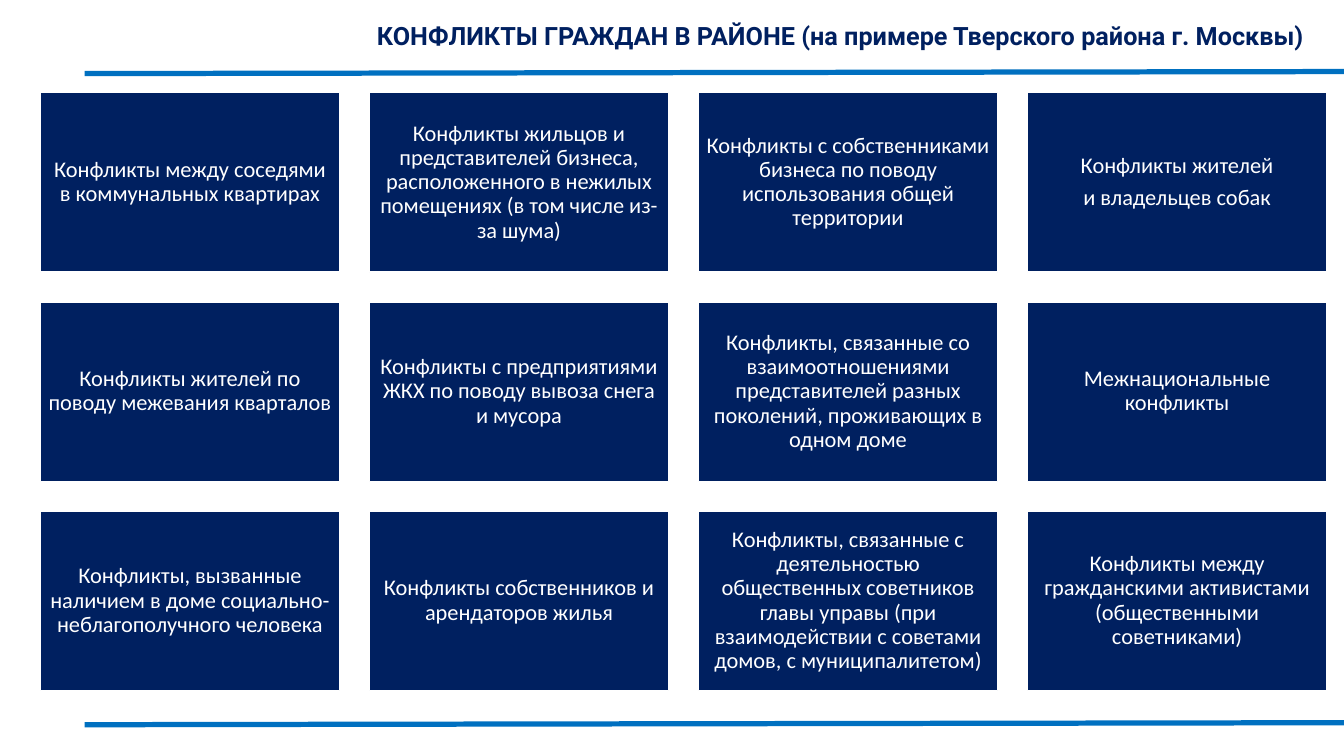
from dataclasses import dataclass

from lxml import etree
from pptx import Presentation, util as u
from pptx.dml.color import RGBColor
from pptx.enum import shapes, text
from pptx.oxml import ns
from pptx.shapes.autoshape import Shape
from pptx.slide import Slide


@dataclass(frozen=True)
class Theme:
    navy: RGBColor = RGBColor(0x00, 0x20, 0x60)
    blue: RGBColor = RGBColor(0x00, 0x70, 0xC0)
    white: RGBColor = RGBColor(0xFF, 0xFF, 0xFF)
    title_font: str = "Roboto"
    card_font: str = "Calibri"
    title_size: float = 18
    card_size: float = 16
    rule_width: float = 3.75
    card_border: float = 1


@dataclass(frozen=True)
class Grid:
    left: float
    top: float
    right: float
    bottom: float
    columns: int
    rows: int
    card_width: float
    card_height: float

    def corner(self, index: int) -> tuple[float, float]:
        """Left and top of a card, counted row by row."""
        row, column = divmod(index, self.columns)
        step_x = (self.right - self.card_width - self.left) / (self.columns - 1)
        step_y = (self.bottom - self.card_height - self.top) / (self.rows - 1)
        return self.left + column * step_x, self.top + row * step_y


THEME = Theme()
SLIDE_WIDTH, SLIDE_HEIGHT = 13.33, 7.5
RULE_LEFT, RULE_RISE = 0.84, 0.02
RULE_TOPS = (7.19, 0.73)
CARD_INSET = 0.07
GRID = Grid(left=0.4, top=0.92, right=13.16, bottom=6.85, columns=4, rows=3,
            card_width=2.97, card_height=1.78)

TITLE = "КОНФЛИКТЫ ГРАЖДАН В РАЙОНЕ (на примере Тверского района г. Москвы)"
CONFLICTS = (
    "Конфликты между соседями в коммунальных квартирах",
    "Конфликты жильцов и представителей бизнеса, расположенного в нежилых "
    "помещениях (в том числе из-за шума)",
    "Конфликты с собственниками бизнеса по поводу использования общей территории",
    "Конфликты жителей\nи владельцев собак",
    "Конфликты жителей по поводу межевания кварталов",
    "Конфликты с предприятиями ЖКХ по поводу вывоза снега и мусора",
    "Конфликты, связанные со взаимоотношениями представителей разных поколений, "
    "проживающих в одном доме",
    "Межнациональные конфликты",
    "Конфликты, вызванные наличием в доме социально-неблагополучного человека",
    "Конфликты собственников и арендаторов жилья",
    "Конфликты, связанные с деятельностью общественных советников главы управы "
    "(при взаимодействии с советами домов, с муниципалитетом)",
    "Конфликты между гражданскими активистами (общественными советниками)",
)


def write(shape: Shape, wording: str, *, font: str, size: float, color: RGBColor,
          bold: bool = False, align: text.PP_ALIGN = text.PP_ALIGN.LEFT,
          line_spacing: float = 1.0, space_after: float = 0) -> None:
    """Fill the shape with text; each line becomes a paragraph."""
    frame = shape.text_frame
    frame.text = wording
    for paragraph in frame.paragraphs:
        paragraph.alignment = align
        paragraph.line_spacing = line_spacing
        paragraph.space_after = u.Pt(space_after)
        for run in paragraph.runs:
            run.font.name = font
            run.font.size = u.Pt(size)
            run.font.bold = bold
            run.font.color.rgb = color


def draw_rule(slide: Slide, top: float) -> None:
    rule = slide.shapes.add_connector(
        shapes.MSO_CONNECTOR.STRAIGHT, u.Inches(RULE_LEFT), u.Inches(top),
        u.Inches(SLIDE_WIDTH), u.Inches(top - RULE_RISE))
    rule.line.color.rgb = THEME.blue
    rule.line.width = u.Pt(THEME.rule_width)
    etree.SubElement(rule._element.spPr, ns.qn("a:effectLst"))


def draw_card(slide: Slide, index: int, conflict: str) -> None:
    left, top = GRID.corner(index)
    card = slide.shapes.add_shape(
        shapes.MSO_SHAPE.RECTANGLE, u.Inches(left), u.Inches(top),
        u.Inches(GRID.card_width), u.Inches(GRID.card_height))
    card.shadow.inherit = False
    card.fill.solid()
    card.fill.fore_color.rgb = THEME.navy
    card.line.color.rgb = THEME.white
    card.line.width = u.Pt(THEME.card_border)
    frame = card.text_frame
    frame.word_wrap = True
    frame.vertical_anchor = text.MSO_ANCHOR.MIDDLE
    frame.margin_left = frame.margin_right = u.Inches(CARD_INSET)
    frame.margin_top = frame.margin_bottom = u.Inches(CARD_INSET)
    write(card, conflict, font=THEME.card_font, size=THEME.card_size,
          color=THEME.white, align=text.PP_ALIGN.CENTER,
          line_spacing=0.9, space_after=0.35 * THEME.card_size)


def draw_title(slide: Slide) -> None:
    title = slide.shapes.add_textbox(
        u.Inches(3.64), u.Inches(0.15), u.Inches(9.69), u.Inches(0.4))
    title.text_frame.word_wrap = False
    title.text_frame.auto_size = text.MSO_AUTO_SIZE.SHAPE_TO_FIT_TEXT
    write(title, TITLE, font=THEME.title_font, size=THEME.title_size,
          color=THEME.navy, bold=True)


def main() -> None:
    deck = Presentation()
    deck.slide_width = u.Inches(SLIDE_WIDTH)
    deck.slide_height = u.Inches(SLIDE_HEIGHT)
    slide = deck.slides.add_slide(deck.slide_layouts[6])
    for top in RULE_TOPS:
        draw_rule(slide, top)
    for index, conflict in enumerate(CONFLICTS):
        draw_card(slide, index, conflict)
    draw_title(slide)
    deck.save("out.pptx")


if __name__ == "__main__":
    main()
